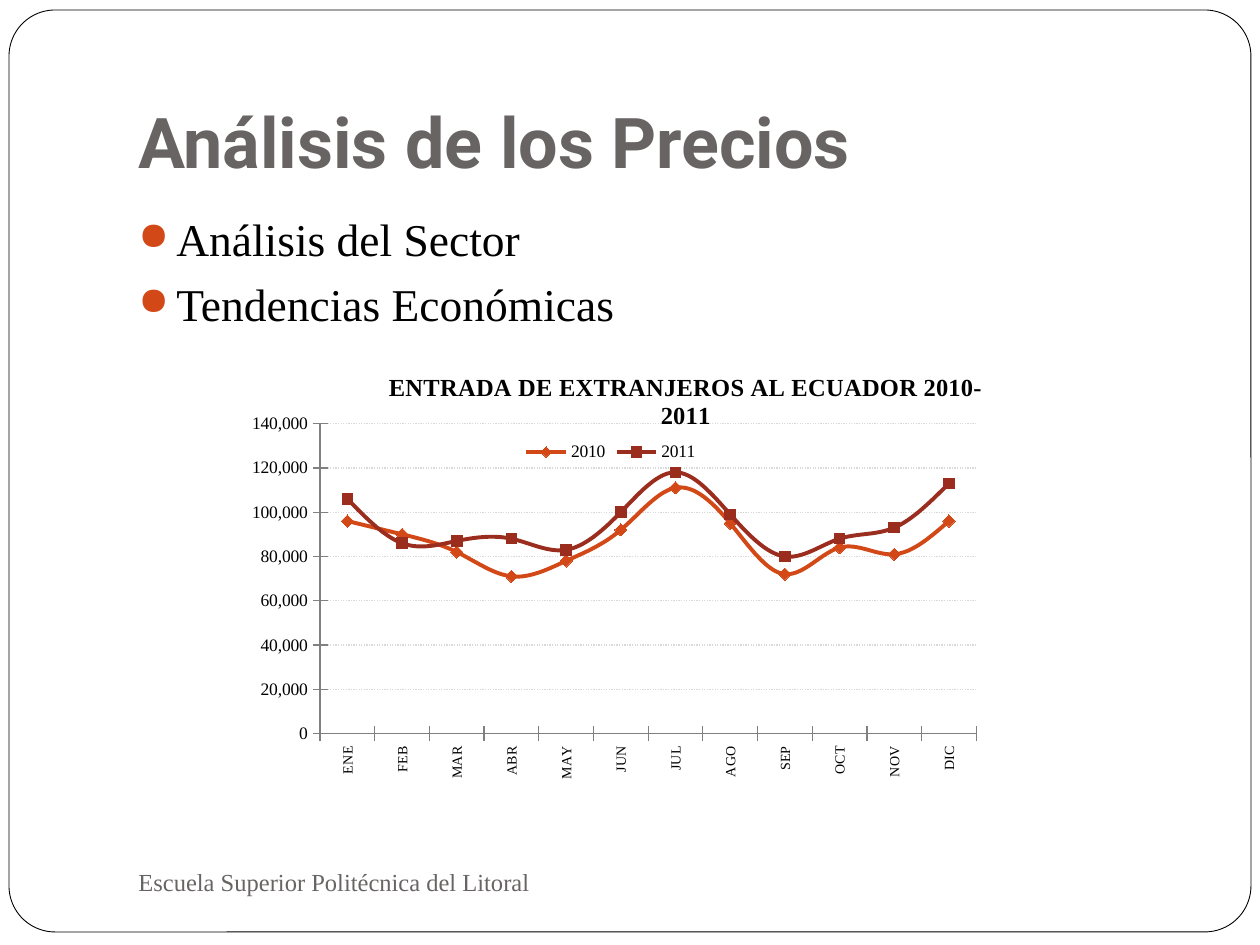
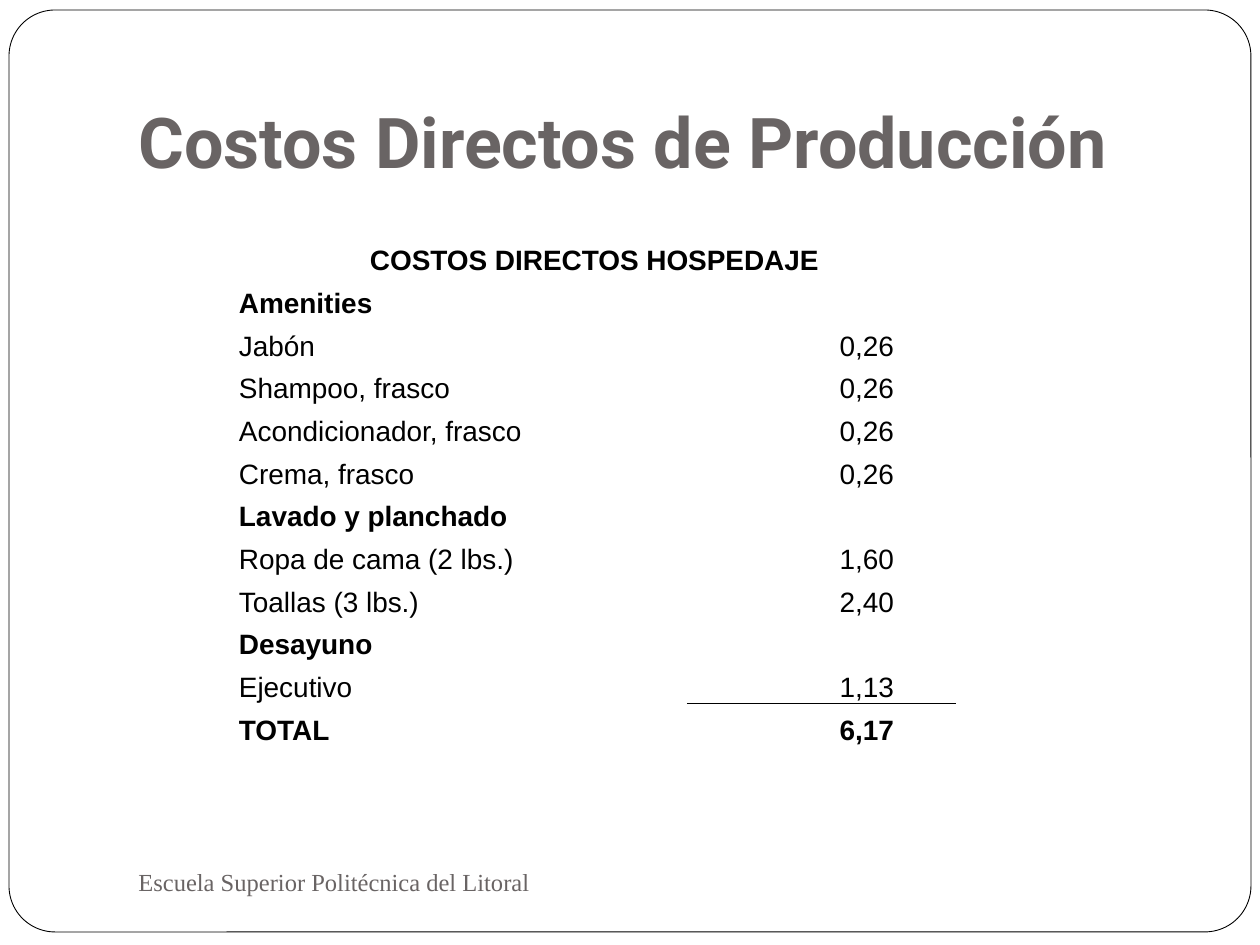
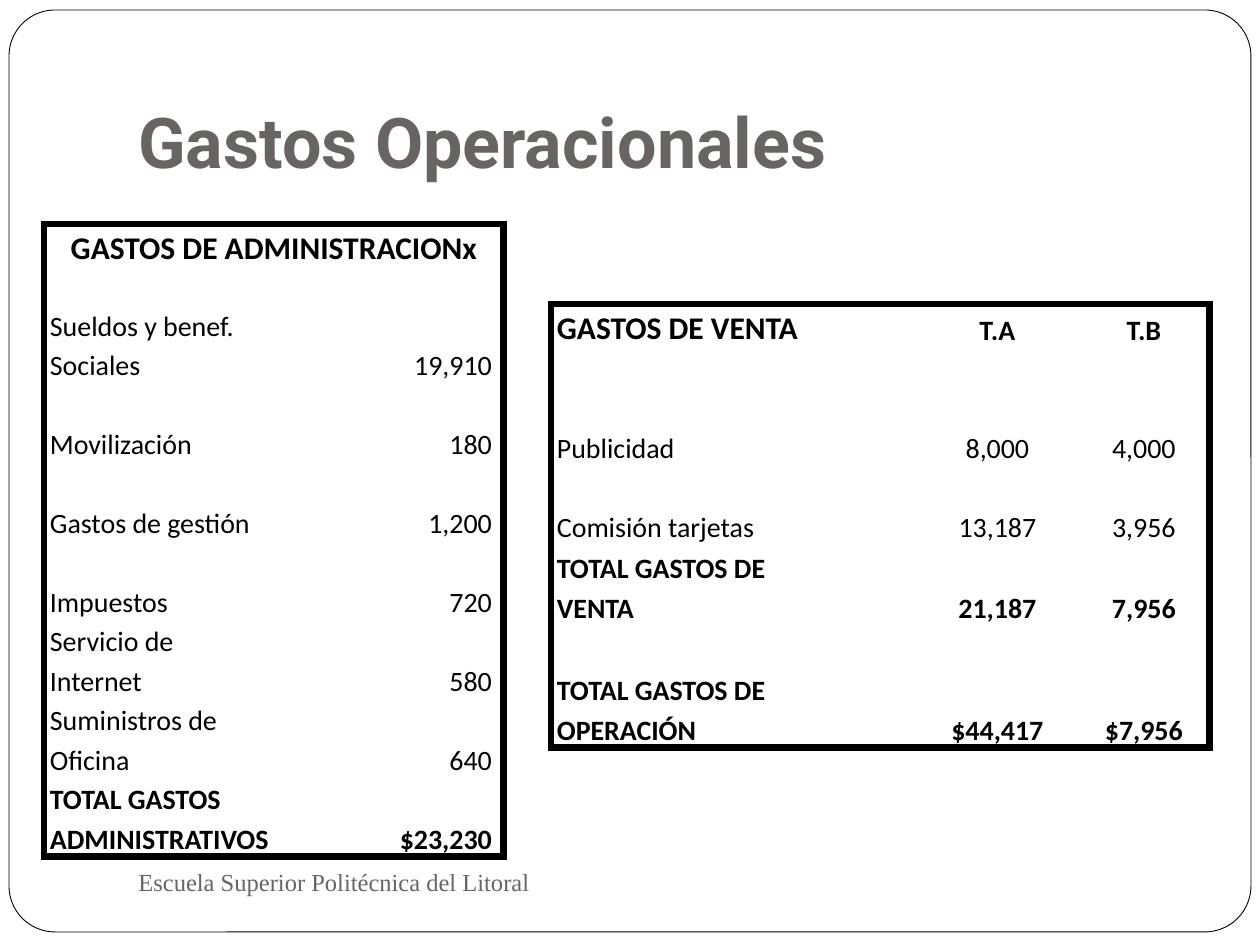
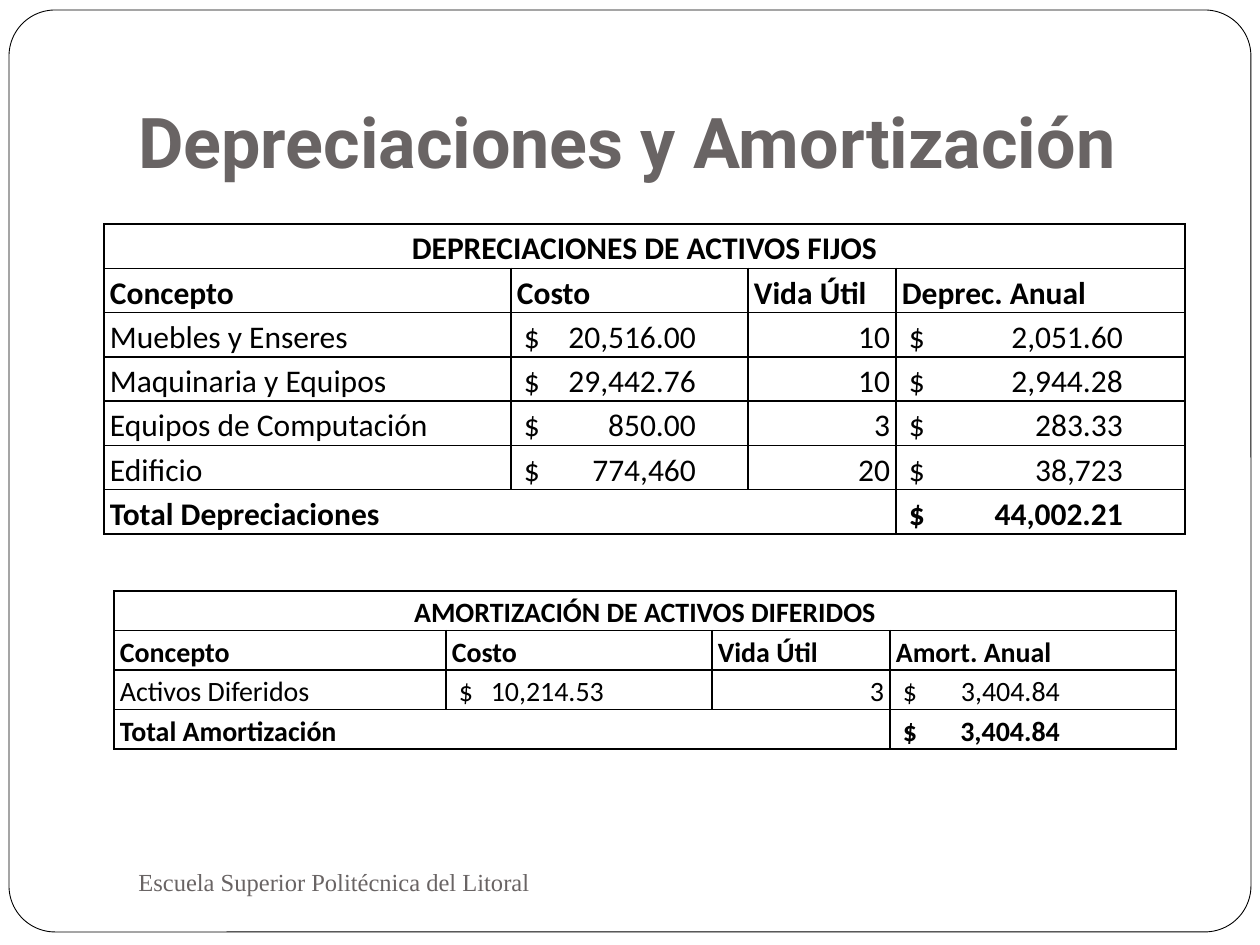
import lxml.etree
import pptx
import pptx.chart.data
import pptx.dml.color
import pptx.enum.chart
import pptx.enum.dml
import pptx.enum.shapes
import pptx.enum.text
import pptx.oxml
import pptx.oxml.ns
import pptx.util

COLORS = {
    "paper": "FFFFFF", "ink": "000000", "heading": "696464", "bullet": "D34817",
    "2010": "D34817", "2011": "9B2D1F", "grid": "D9D9D9", "axis": "808080",
}
SERIF = "Times New Roman"
FOOTER = "Escuela Superior Politécnica del Litoral"
NO_TABLE_STYLE = "{2D5ABB26-0587-4C30-8999-92F81FD0307C}"
PX_PER_INCH = 126
CELL_MARGIN = 6
MONEY_MARGIN = 13

BULLETS = ["Análisis del Sector", "Tendencias Económicas"]
CHART_TITLE = "ENTRADA DE EXTRANJEROS AL ECUADOR 2010-2011"
MONTHS = ["ENE", "FEB", "MAR", "ABR", "MAY", "JUN",
          "JUL", "AGO", "SEP", "OCT", "NOV", "DIC"]
ARRIVALS = {
    "2010": [96000, 90000, 82000, 71000, 78000, 92000,
             111000, 95000, 72000, 84000, 81000, 96000],
    "2011": [106000, 86000, 87000, 88000, 83000, 100000,
             118000, 99000, 80000, 88000, 93000, 113000],
}
MARKERS = {"2010": ("DIAMOND", 7), "2011": ("SQUARE", 6)}

# Columns: (width, alignment, right margin, position of the tab for amounts).
# Rows: kind, then cells; None joins a cell to the one on its left.
LODGING_COSTS = {
    "at": (233, 234), "height": 512, "font": "Arial", "sizes": (16, 16),
    "border": "subtotal",
    "columns": [(410, "LEFT", 6, 0), (22, "LEFT", 6, 0), (22, "LEFT", 6, 0),
                (269, "RIGHT", 62, 0)],
    "rows": [
        ("title", "COSTOS DIRECTOS HOSPEDAJE", None, None, None),
        ("head", "Amenities", "", "", ""),
        ("item", "Jabón", "", "", "0,26"),
        ("item", "Shampoo, frasco", "", "", "0,26"),
        ("item", "Acondicionador, frasco", "", "", "0,26"),
        ("item", "Crema, frasco", "", "", "0,26"),
        ("head", "Lavado y planchado", "", "", ""),
        ("item", "Ropa de cama (2 lbs.)", "", "", "1,60"),
        ("item", "Toallas (3 lbs.)", "", "", "2,40"),
        ("head", "Desayuno", "", "", ""),
        ("item", "Ejecutivo", "", "", "1,13"),
        ("total", "TOTAL", "", "", "6,17"),
    ],
}
ADMINISTRATION = {
    "at": (44, 224), "heights": [44, 36] + [79] * 7, "font": "Calibri",
    "sizes": (18, 16), "border": "outline",
    "columns": [(224, "LEFT", 6, 0), (15, "LEFT", 6, 0), (48, "LEFT", 6, 0),
                (171, "RIGHT", 12, 0)],
    "rows": [
        ("title", "GASTOS DE ADMINISTRACIONx", None, None, None),
        ("item", "", "", "", ""),
        ("item", "Sueldos y benef. Sociales", "", "", "19,910"),
        ("item", "Movilización", "", "", "180"),
        ("item", "Gastos de gestión", "", "", "1,200"),
        ("item", "Impuestos", "", "", "720"),
        ("item", "Servicio de Internet", "", "", "580"),
        ("item", "Suministros de Oficina", "", "", "640"),
        ("total", "TOTAL GASTOS ADMINISTRATIVOS", None, "", "$23,230"),
    ],
}
SALES = {
    "at": (551, 304), "heights": [44, 39, 79, 79, 81, 41, 81], "font": "Calibri",
    "sizes": (18, 16), "border": "outline",
    "columns": [(297, "LEFT", 6, 0), (20, "LEFT", 6, 0), (49, "LEFT", 6, 0),
                (161, "CENTER", 6, 0), (132, "CENTER", 6, 0)],
    "rows": [
        ("title", "GASTOS DE VENTA", "", "", "T.A", "T.B"),
        ("item", "", "", "", "", ""),
        ("item", "Publicidad", "", "", "8,000", "4,000"),
        ("item", "Comisión tarjetas", "", "", "13,187", "3,956"),
        ("total", "TOTAL GASTOS DE VENTA", "", "", "21,187", "7,956"),
        ("item", "", "", "", "", ""),
        ("total", "TOTAL GASTOS DE OPERACIÓN", "", "", "$44,417", "$7,956"),
    ],
}
DEPRECIATION = {
    "at": (104, 224), "height": 310, "font": "Calibri", "sizes": (18, 18),
    "border": "grid",
    "columns": [(407, "LEFT", 6, 0), (237, "LEFT", 6, 172), (148, "RIGHT", 6, 0),
                (289, "LEFT", 6, 214)],
    "rows": [
        ("title", "DEPRECIACIONES DE ACTIVOS FIJOS", None, None, None),
        ("head", "Concepto", "Costo", "Vida Útil", "Deprec. Anual"),
        ("item", "Muebles y Enseres", "$\t20,516.00", "10", "$\t2,051.60"),
        ("item", "Maquinaria y Equipos", "$\t29,442.76", "10", "$\t2,944.28"),
        ("item", "Equipos de Computación", "$\t850.00", "3", "$\t283.33"),
        ("item", "Edificio", "$\t774,460", "20", "$\t38,723"),
        ("total", "Total Depreciaciones", None, None, "$\t44,002.21"),
    ],
}
AMORTIZATION = {
    "at": (114, 591), "height": 158, "font": "Calibri", "sizes": (16, 16),
    "border": "grid",
    "columns": [(332, "LEFT", 6, 0), (266, "LEFT", 6, 145), (178, "RIGHT", 6, 0),
                (286, "LEFT", 6, 157)],
    "rows": [
        ("title", "AMORTIZACIÓN DE ACTIVOS DIFERIDOS", None, None, None),
        ("head", "Concepto", "Costo", "Vida Útil", "Amort. Anual"),
        ("item", "Activos Diferidos", "$\t10,214.53", "3", "$\t3,404.84"),
        ("total", "Total Amortización", None, None, "$\t3,404.84"),
    ],
}
TABLE_SLIDES = [
    ("Costos Directos de Producción", [LODGING_COSTS]),
    ("Gastos Operacionales", [ADMINISTRATION, SALES]),
    ("Depreciaciones y Amortización", [DEPRECIATION, AMORTIZATION]),
]


def px(length):
    return pptx.util.Emu(round(length * 914400 / PX_PER_INCH))


def rgb(name):
    return pptx.dml.color.RGBColor.from_string(COLORS[name])


def add_element(parent, tag, **attributes):
    return lxml.etree.SubElement(parent, pptx.oxml.ns.qn(tag), attributes)


def set_font(font, name, size, color="ink", bold=False):
    font.name, font.size, font.bold = name, pptx.util.Pt(size), bold
    font.color.rgb = rgb(color)


def add_text(slide, box, lines, anchor):
    shape = slide.shapes.add_textbox(*map(px, box))
    frame = shape.text_frame
    frame.word_wrap = True
    frame.vertical_anchor = pptx.enum.text.MSO_ANCHOR[anchor]
    frame.text = "\n".join(lines)
    return frame


def add_base_slide(presentation, title):
    """Add a slide with the shared frame, title and footer."""
    slide = presentation.slides.add_slide(presentation.slide_layouts[6])
    frame = slide.shapes.add_shape(
        pptx.enum.shapes.MSO_SHAPE.ROUNDED_RECTANGLE, *map(px, (9, 10, 1242, 922)))
    frame.adjustments[0] = 0.05
    frame.shadow.inherit = False
    frame.fill.solid()
    frame.fill.fore_color.rgb = rgb("paper")
    frame.line.color.rgb = rgb("ink")
    frame.line.width = pptx.util.Pt(0.5)

    heading = add_text(slide, (126, 38, 1071, 157), [title], "BOTTOM")
    heading.margin_bottom = px(13)
    set_font(heading.paragraphs[0].font, "Roboto", 40, "heading", True)
    footer = add_text(slide, (126, 850, 546, 63), [FOOTER], "MIDDLE")
    set_font(footer.paragraphs[0].font, SERIF, 14, "heading")
    return slide


def add_bullets(slide):
    frame = add_text(slide, (126, 205, 1071, 624), BULLETS, "TOP")
    for number, paragraph in enumerate(frame.paragraphs):
        if number:
            paragraph.space_before = pptx.util.Pt(5.8)
        properties = paragraph._p.get_or_add_pPr()
        properties.set("marL", str(px(38)))
        properties.set("indent", str(px(-38)))
        bullet_color = add_element(properties, "a:buClr")
        add_element(bullet_color, "a:srgbClr", val=COLORS["bullet"])
        add_element(properties, "a:buSzPct", val="85000")
        add_element(properties, "a:buChar", char="●")
        set_font(paragraph.font, SERIF, 26)


def place_chart_part(part, index, **fractions):
    """Give a chart part a manual layout, as fractions of the chart."""
    for old in part.findall(pptx.oxml.ns.qn("c:layout")):
        part.remove(old)
    layout = lxml.etree.Element(pptx.oxml.ns.qn("c:layout"))
    manual = add_element(layout, "c:manualLayout")
    if "w" in fractions:
        add_element(manual, "c:layoutTarget", val="inner")
    for side in ("x", "y"):
        add_element(manual, f"c:{side}Mode", val="edge")
    for side, value in fractions.items():
        add_element(manual, f"c:{side}", val=str(value))
    part.insert(index, layout)


def add_arrivals_chart(slide):
    data = pptx.chart.data.CategoryChartData(number_format="#,##0")
    data.categories = MONTHS
    for name, values in ARRIVALS.items():
        data.add_series(name, values)
    chart = slide.shapes.add_chart(
        pptx.enum.chart.XL_CHART_TYPE.LINE_MARKERS,
        *map(px, (233, 354, 757, 438)), data).chart
    set_font(chart.font, SERIF, 10)

    chart.has_title = True
    title = chart.chart_title
    title.text_frame.text = CHART_TITLE
    set_font(title.text_frame.paragraphs[0].font, SERIF, 14, bold=True)
    title.include_in_layout = False
    place_chart_part(title._element, 1, x=0.2, y=0.03)

    chart.has_legend = True
    chart.legend.position = pptx.enum.chart.XL_LEGEND_POSITION.TOP
    chart.legend.include_in_layout = False
    place_chart_part(chart.legend._element, 1, x=0.38, y=0.19)
    plot_area = chart._chartSpace.chart.plotArea
    place_chart_part(plot_area, 0, x=0.115, y=0.159, w=0.867, h=0.708)

    for axis, size in ((chart.category_axis, 8), (chart.value_axis, 10)):
        axis.major_tick_mark = pptx.enum.chart.XL_TICK_MARK.CROSS
        axis.format.line.color.rgb = rgb("axis")
        set_font(axis.tick_labels.font, SERIF, size)
    for body in chart.category_axis._element.xpath("c:txPr/a:bodyPr"):
        body.set("rot", "-5400000")
        body.set("vert", "horz")
    value_axis = chart.value_axis
    value_axis.minimum_scale, value_axis.maximum_scale = 0, 140000
    value_axis.major_unit = 20000
    value_axis.tick_labels.number_format = "#,##0"
    value_axis.tick_labels.number_format_is_linked = False
    grid = value_axis.major_gridlines.format.line
    grid.color.rgb = rgb("grid")
    grid.width = pptx.util.Pt(0.75)
    grid.dash_style = pptx.enum.dml.MSO_LINE.ROUND_DOT

    for series in chart.plots[0].series:
        color = rgb(series.name)
        style, size = MARKERS[series.name]
        series.smooth = True
        series.format.line.color.rgb = color
        series.format.line.width = pptx.util.Pt(2.25)
        series.marker.style = pptx.enum.chart.XL_MARKER_STYLE[style]
        series.marker.size = size
        series.marker.format.fill.solid()
        series.marker.format.fill.fore_color.rgb = color
        series.marker.format.line.color.rgb = color


def border_sides(border, row, column, span, last_row, last_column):
    """Return the line width and the sides of a cell that carry a line."""
    if border == "grid":
        return 1, "LRTB"
    if border == "outline":
        edges = {"L": column == 0, "R": column + span > last_column,
                 "T": row == 0, "B": row == last_row}
    else:
        edges = {"T": row == last_row and column == last_column,
                 "B": row == last_row - 1 and column == last_column}
    width = 4.5 if border == "outline" else 1
    return width, [side for side, drawn in edges.items() if drawn]


def draw_borders(cell, width, sides):
    properties = cell._tc.get_or_add_tcPr()
    for side in sides:
        line = add_element(properties, f"a:ln{side}", w=str(pptx.util.Pt(width)))
        fill = add_element(line, "a:solidFill")
        add_element(fill, "a:srgbClr", val=COLORS["ink"])


def write_cell(cell, text, font, size, bold, column, align):
    _, _, right_margin, tab = column
    is_money = "\t" in text
    cell.margin_left = px(MONEY_MARGIN if is_money else CELL_MARGIN)
    cell.margin_right = px(right_margin if align == "RIGHT" else CELL_MARGIN)
    cell.margin_top = cell.margin_bottom = 0
    cell.vertical_anchor = pptx.enum.text.MSO_ANCHOR.BOTTOM
    paragraph = cell.text_frame.paragraphs[0]
    if text:
        paragraph.text = text
        paragraph.line_spacing = 1.15
    paragraph.alignment = pptx.enum.text.PP_ALIGN[align]
    if is_money:
        tabs = add_element(paragraph._p.get_or_add_pPr(), "a:tabLst")
        add_element(tabs, "a:tab", pos=str(px(tab)), algn="r")
    set_font(paragraph.font, font, size, bold=bold)


def add_cost_table(slide, content):
    rows, columns = content["rows"], content["columns"]
    count = len(rows)
    heights = content.get("heights") or [content["height"] / count] * count
    width = sum(column[0] for column in columns)
    table = slide.shapes.add_table(
        count, len(columns), *map(px, (*content["at"], width, sum(heights)))).table
    table._tbl.tblPr.find(pptx.oxml.ns.qn("a:tableStyleId")).text = NO_TABLE_STYLE
    table.first_row = table.horz_banding = False
    for table_column, column in zip(table.columns, columns):
        table_column.width = px(column[0])
    for table_row, height in zip(table.rows, heights):
        table_row.height = px(height)

    title_size, text_size = content["sizes"]
    for r, (kind, *texts) in enumerate(rows):
        for c, (text, column) in enumerate(zip(texts, columns)):
            cell = table.cell(r, c)
            span = 1
            while text is not None and c + span < len(texts) and texts[c + span] is None:
                span += 1
            if span > 1:
                cell.merge(table.cell(r, c + span - 1))
            align = column[1]
            if span == len(columns):
                align = "CENTER"
            elif kind == "head" and align == "RIGHT":
                align = "LEFT"
            size = title_size if r == c == 0 else text_size
            draw_borders(cell, *border_sides(
                content["border"], r, c, span, count - 1, len(columns) - 1))
            write_cell(cell, text or "", content["font"], size, kind != "item",
                       column, align)
            cell.fill.background()


def main():
    presentation = pptx.Presentation()
    presentation.slide_width = pptx.util.Inches(10)
    presentation.slide_height = pptx.util.Inches(7.5)
    slide = add_base_slide(presentation, "Análisis de los Precios")
    add_bullets(slide)
    add_arrivals_chart(slide)
    for title, tables in TABLE_SLIDES:
        slide = add_base_slide(presentation, title)
        for content in tables:
            add_cost_table(slide, content)
    presentation.save("out.pptx")


if __name__ == "__main__":
    main()
